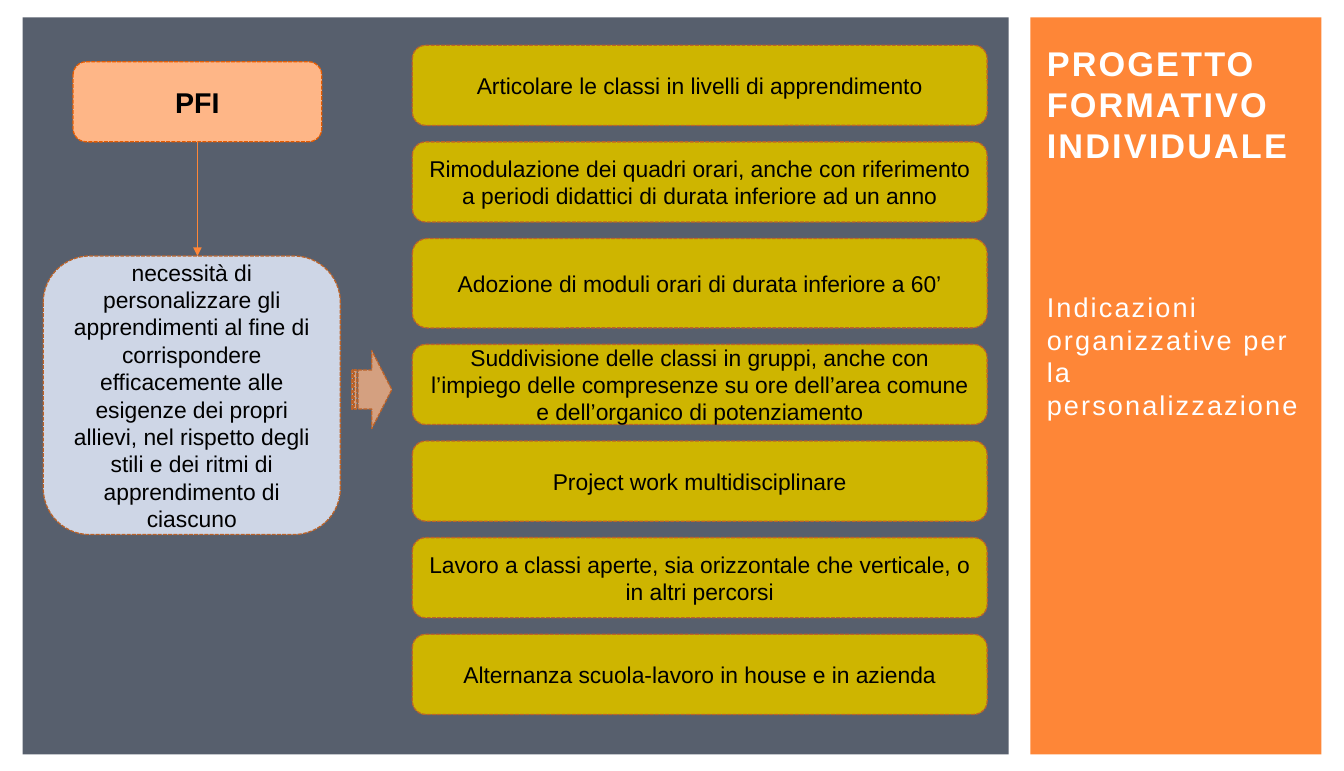
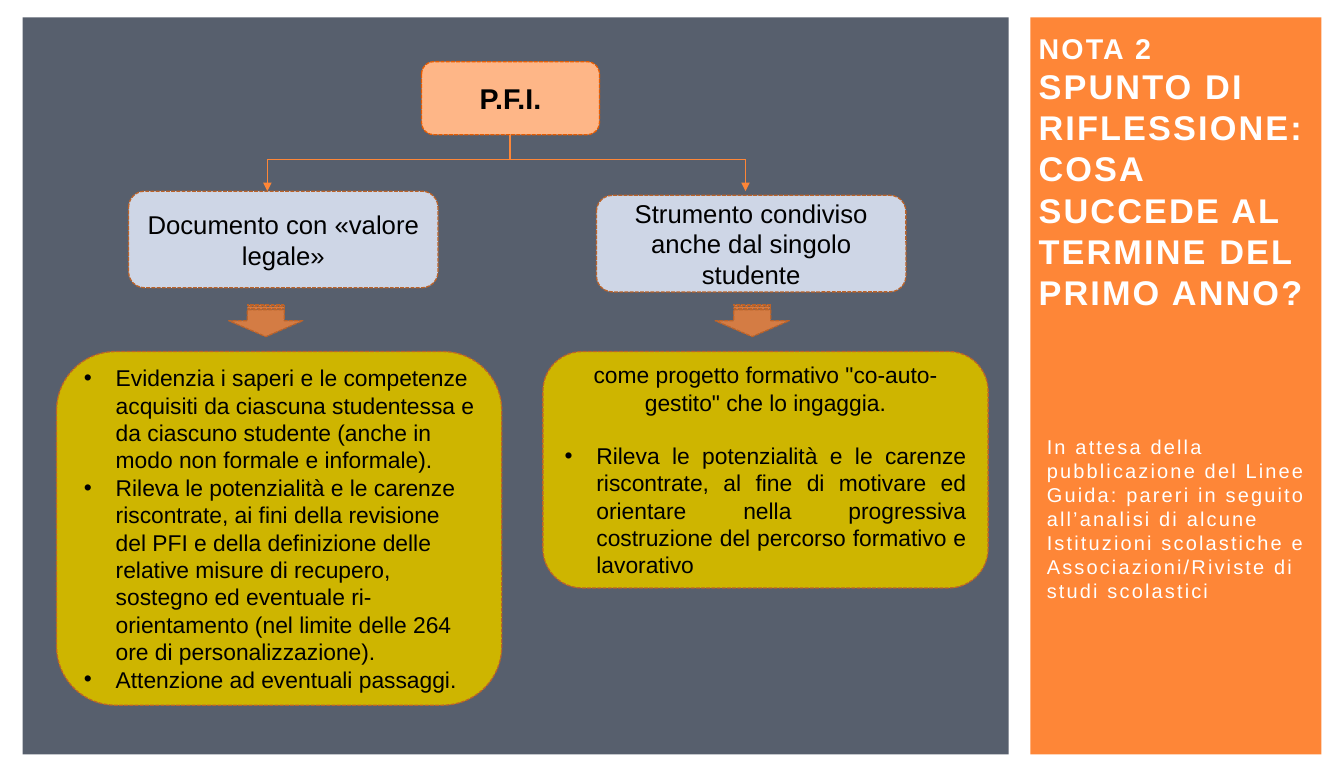
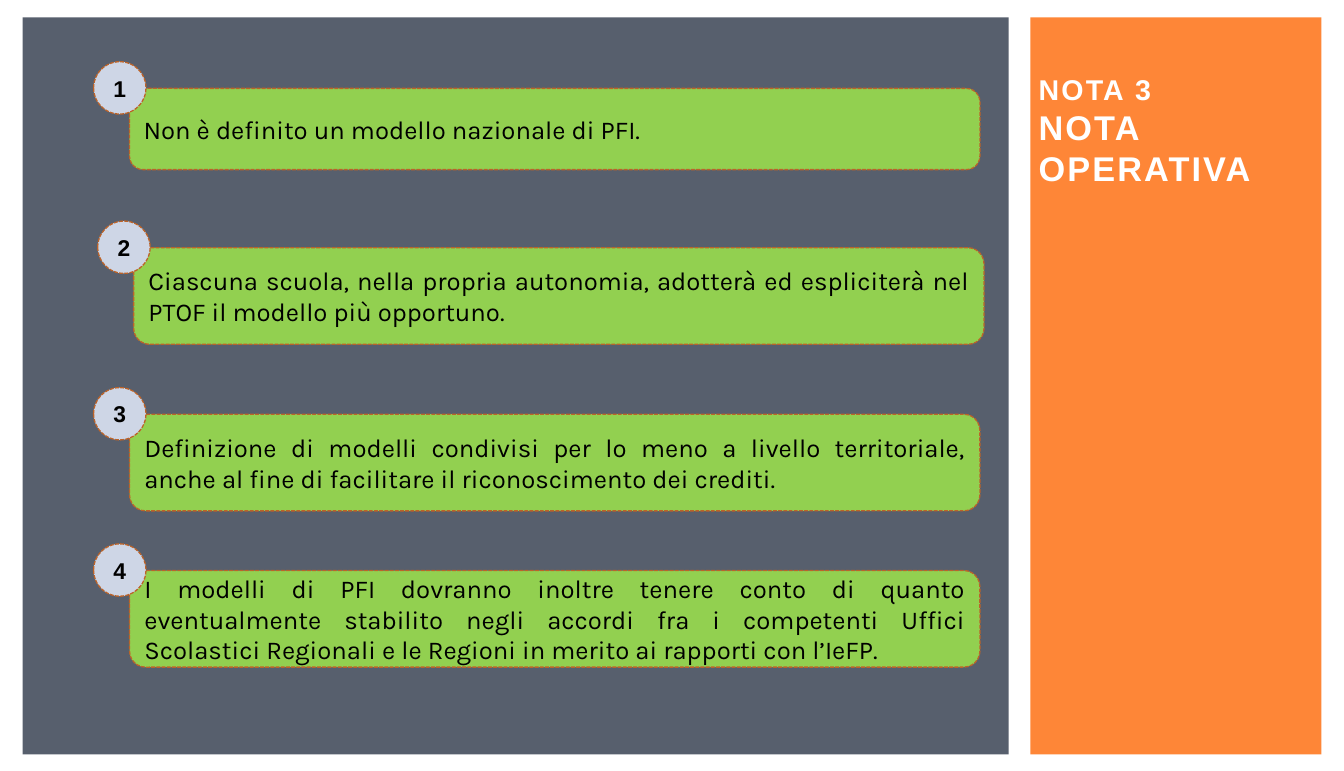
from dataclasses import dataclass

from lxml import etree
from pptx import Presentation
from pptx.dml.color import RGBColor
from pptx.enum.dml import MSO_LINE
from pptx.enum.shapes import MSO_CONNECTOR, MSO_SHAPE
from pptx.enum.text import MSO_ANCHOR, MSO_AUTO_SIZE, PP_ALIGN
from pptx.oxml.ns import qn
from pptx.util import Emu, Pt

PX = 9144  # EMU in one px, 100 px to the inch

RECTANGLE = MSO_SHAPE.RECTANGLE
ROUNDED = MSO_SHAPE.ROUNDED_RECTANGLE
OVAL = MSO_SHAPE.OVAL
STRIPED_ARROW = MSO_SHAPE.STRIPED_RIGHT_ARROW
STRAIGHT = MSO_CONNECTOR.STRAIGHT
DASHED = MSO_LINE.SQUARE_DOT
MIDDLE = MSO_ANCHOR.MIDDLE
NO_FIT = MSO_AUTO_SIZE.NONE
LEFT, CENTER, JUSTIFY = PP_ALIGN.LEFT, PP_ALIGN.CENTER, PP_ALIGN.JUSTIFY


@dataclass(frozen=True)
class Theme:
    orange: str = "FE8637"
    slate: str = "575F6D"
    peach: str = "FEB687"
    mustard: str = "CEB500"
    pale_blue: str = "CED6E6"
    green: str = "92D050"
    white: str = "FFFFFF"
    black: str = "000000"
    border: str = "BC6329"
    root_border: str = "E75C01"
    font: str = "Arial"
    note_font: str = "Karla"
    title: int = 24
    kicker: int = 20
    subtitle: int = 19
    card: int = 18
    body: int = 16
    caption: int = 14


@dataclass(frozen=True)
class Box:
    left: int
    top: int
    width: int
    height: int

    def inner(self, left, top, width, height):
        """A box placed relative to this one."""
        return Box(self.left + left, self.top + top, width, height)

    def emu(self):
        return [Emu(value * PX) for value in (self.left, self.top, self.width, self.height)]


THEME = Theme()
PANEL = Box(22, 17, 959, 717)
SIDEBAR = Box(1002, 17, 283, 717)


# Text and shape helpers
def format_paragraph(paragraph, size, color=THEME.black, font=THEME.font,
                     bold=False, align=CENTER, spacing=0):
    paragraph.alignment = align
    for run in paragraph.runs:
        run.font.size = Pt(size)
        run.font.name = font
        run.font.bold = bold
        run.font.color.rgb = RGBColor.from_string(color)
        if spacing:
            run._r.get_or_add_rPr().set("spc", str(spacing))


def add_bullet(paragraph, indent=31):
    properties = paragraph._p.get_or_add_pPr()
    properties.set("marL", str(indent * PX))
    properties.set("indent", str(-indent * PX))
    etree.SubElement(properties, qn("a:buFont")).set("typeface", THEME.font)
    etree.SubElement(properties, qn("a:buChar")).set("char", "•")


def add_block(slide, kind, box, fill, border=None):
    shape = slide.shapes.add_shape(kind, *box.emu())
    shape.shadow.inherit = False
    shape.fill.solid()
    shape.fill.fore_color.rgb = RGBColor.from_string(fill)
    if border:
        shape.line.color.rgb = RGBColor.from_string(border)
        shape.line.width = Pt(0.9)
        shape.line.dash_style = DASHED
    else:
        shape.line.fill.background()
    return shape


def add_card(slide, box, fill, text, size, kind=ROUNDED, border=THEME.border, **style):
    shape = add_block(slide, kind, box, fill, border)
    shape.text_frame.word_wrap = True
    shape.text_frame.text = text
    for paragraph in shape.text_frame.paragraphs:
        format_paragraph(paragraph, size, **style)
    return shape


def add_root(slide, box, text):
    add_card(slide, box, THEME.peach, text, THEME.kicker, border=THEME.root_border, bold=True)


def add_block_arrow(slide, box, fill, rotation=0):
    arrow = add_block(slide, STRIPED_ARROW, box, fill, THEME.border)
    arrow.rotation = rotation
    color = arrow.element.spPr.find(qn("a:solidFill")).find(qn("a:srgbClr"))
    etree.SubElement(color, qn("a:alpha")).set("val", "75000")


def add_line(slide, area, start, end, arrow=False):
    points = (area.left + start[0], area.top + start[1], area.left + end[0], area.top + end[1])
    line = slide.shapes.add_connector(STRAIGHT, *[Emu(value * PX) for value in points])
    line.line.color.rgb = RGBColor.from_string(THEME.orange)
    line.line.width = Pt(0.75)
    properties = line.element.spPr
    if arrow:
        etree.SubElement(properties.find(qn("a:ln")), qn("a:tailEnd")).set("type", "triangle")
    etree.SubElement(properties, qn("a:effectLst"))


# Shared frame: bands on the layout, title and subtitle in the sidebar
def add_bands(slide):
    bands = ((SIDEBAR, THEME.orange), (PANEL, THEME.slate))
    for index, (box, fill) in enumerate(bands):
        band = add_block(slide, RECTANGLE, box, fill)
        band.element.nvSpPr.cNvPr.set("id", str(20 + index))
        slide.slide_layout.shapes.element.insert(2 + index, band.element)


def fill_placeholder(placeholder, box, lines, bold):
    placeholder.left, placeholder.top, placeholder.width, placeholder.height = box.emu()
    frame = placeholder.text_frame
    frame.word_wrap = True
    frame.auto_size = NO_FIT
    frame.vertical_anchor = MIDDLE
    frame.text = "\n".join(text for text, size in lines)
    for paragraph, (text, size) in zip(frame.paragraphs, lines):
        format_paragraph(paragraph, size, THEME.white, bold=bold, align=LEFT, spacing=150)


def fill_sidebar(slide, title_box, title, subtitle_box=None, subtitle=None):
    fill_placeholder(slide.shapes.title, title_box, title, bold=True)
    placeholder = slide.placeholders[1]
    if subtitle:
        fill_placeholder(placeholder, subtitle_box, [subtitle], bold=False)
    else:
        placeholder.element.getparent().remove(placeholder.element)


# Slide 1: need on the left, organisational steps on the right
STEPS = (
    ("Articolare le classi in livelli di apprendimento", 78),
    ("Rimodulazione dei quadri orari, anche con riferimento a periodi didattici "
     "di durata inferiore ad un anno", 78),
    ("Adozione di moduli orari di durata inferiore a 60’", 87),
    ("Suddivisione delle classi in gruppi, anche con l’impiego delle compresenze "
     "su ore dell’area comune e dell’organico di potenziamento", 78),
    ("Project work multidisciplinare", 78),
    ("Lavoro a classi aperte, sia orizzontale che verticale, o in altri percorsi", 78),
    ("Alternanza scuola-lavoro in house e in azienda", 78),
)
NEED = ("necessità di personalizzare gli apprendimenti al fine di corrispondere "
        "efficacemente alle esigenze dei propri allievi, nel rispetto degli stili "
        "e dei ritmi di apprendimento di ciascuno")


def draw_need(slide, area):
    add_root(slide, area.inner(29, 0, 242, 78), "PFI")
    add_line(slide, area, (150, 78), (150, 189), arrow=True)
    add_card(slide, area.inner(0, 189, 289, 271), THEME.pale_blue, NEED, THEME.body)
    add_block_arrow(slide, area.inner(300, 281, 39, 76), THEME.peach)


def draw_steps(slide, area, gap=16):
    top = 0
    for text, height in STEPS:
        add_card(slide, area.inner(0, top, area.width, height), THEME.mustard, text, THEME.body)
        top += height + gap


def build_organisation(slide):
    fill_sidebar(slide, SIDEBAR.inner(6, 4, 299, 160),
                 [("PROGETTO FORMATIVO INDIVIDUALE", THEME.title)],
                 SIDEBAR.inner(6, 229, 283, 200),
                 ("Indicazioni organizzative per la personalizzazione", THEME.subtitle))
    draw_need(slide, PANEL.inner(20, 43, 339, 460))
    draw_steps(slide, PANEL.inner(379, 27, 559, 651))


# Slide 2: tree with two branches
LEGAL_POINTS = (
    "Evidenzia i saperi e le competenze acquisiti da ciascuna studentessa e da "
    "ciascuno studente (anche in modo non formale e informale).",
    "Rileva le potenzialità e le carenze riscontrate, ai fini della revisione del PFI "
    "e della definizione delle relative misure di recupero, sostegno ed eventuale "
    "ri-orientamento (nel limite delle 264 ore di personalizzazione).",
    "Attenzione ad eventuali passaggi.",
)
SHARED_POINTS = (
    "come progetto formativo \"co-auto-gestito\" che lo ingaggia.",
    "Rileva le potenzialità e le carenze riscontrate, al fine di motivare ed orientare "
    "nella progressiva costruzione del percorso formativo e lavorativo",
)


def draw_trunk(slide, area):
    add_root(slide, area.inner(388, 0, 173, 71), "P.F.I.")
    add_line(slide, area, (474, 71), (474, 95))
    add_line(slide, area, (238, 95), (703, 95))
    for drop in (238, 703):
        add_line(slide, area, (drop, 95), (drop, 126), arrow=True)


def draw_branch(slide, area, card_left, card_top, heading, points, align):
    add_card(slide, area.inner(card_left, card_top, 301, 94),
             THEME.pale_blue, heading, THEME.card)
    add_block_arrow(slide, area.inner(188, 90, 31, 72), THEME.orange, rotation=90)
    detail = add_card(slide, area.inner(0, 156, area.width, area.height - 156),
                      THEME.mustard, "\n".join(points), THEME.body, align=align)
    return detail.text_frame.paragraphs


def build_reflection(slide):
    fill_sidebar(slide, SIDEBAR.inner(-2, 12, 307, 276),
                 [("NOTA 2", THEME.kicker),
                  ("SPUNTO DI RIFLESSIONE: COSA SUCCEDE AL TERMINE DEL PRIMO ANNO?",
                   THEME.title)],
                 SIDEBAR.inner(6, 271, 283, 433),
                 ("In attesa della pubblicazione del Linee Guida: pareri in seguito "
                  "all’analisi di alcune Istituzioni scolastiche e Associazioni/Riviste "
                  "di studi scolastici", THEME.caption))
    draw_trunk(slide, PANEL.inner(0, 43, 959, 126))
    legal = draw_branch(slide, PANEL.inner(33, 169, 433, 500), 70, 0,
                        "Documento con «valore legale»", LEGAL_POINTS, LEFT)
    intro, shared = draw_branch(slide, PANEL.inner(506, 169, 433, 386), 52, 4,
                                "Strumento condiviso anche dal singolo studente",
                                SHARED_POINTS, JUSTIFY)
    intro.alignment = CENTER
    shared.space_before = Pt(18)
    for paragraph in (*legal, shared):
        add_bullet(paragraph)


# Slide 3: numbered notes
NOTES = (  # left, top, height, text
    (0, 0, 79, "Non è definito un modello nazionale di PFI."),
    (4, 155, 94, "Ciascuna scuola, nella propria autonomia, adotterà ed espliciterà nel PTOF "
                 "il modello più opportuno."),
    (0, 317, 94, "Definizione di modelli condivisi per lo meno a livello territoriale, anche "
                 "al fine di facilitare il riconoscimento dei crediti."),
    (0, 469, 94, "I modelli di PFI dovranno inoltre tenere conto di quanto eventualmente "
                 "stabilito negli accordi fra i competenti Uffici Scolastici Regionali e le "
                 "Regioni in merito ai rapporti con l’IeFP."),
)


def draw_note(slide, area, number, text):
    add_card(slide, area, THEME.green, text, THEME.card, font=THEME.note_font, align=JUSTIFY)
    add_card(slide, area.inner(-35, -26, 51, 51), THEME.pale_blue, str(number),
             THEME.body, kind=OVAL, bold=True)


def build_notes(slide):
    fill_sidebar(slide, SIDEBAR.inner(-2, -28, 307, 276),
                 [("NOTA 3", THEME.kicker), ("NOTA OPERATIVA", THEME.title)])
    area = PANEL.inner(104, 69, 827, 563)
    for number, (left, top, height, text) in enumerate(NOTES, start=1):
        draw_note(slide, area.inner(left, top, area.width, height), number, text)


def main():
    presentation = Presentation()
    presentation.slide_width = Emu(1307 * PX)
    presentation.slide_height = Emu(750 * PX)
    layout = presentation.slide_layouts[0]
    builders = (build_organisation, build_reflection, build_notes)
    slides = [presentation.slides.add_slide(layout) for _ in builders]
    add_bands(slides[0])
    for build, slide in zip(builders, slides):
        build(slide)
    presentation.save("out.pptx")


if __name__ == "__main__":
    main()
